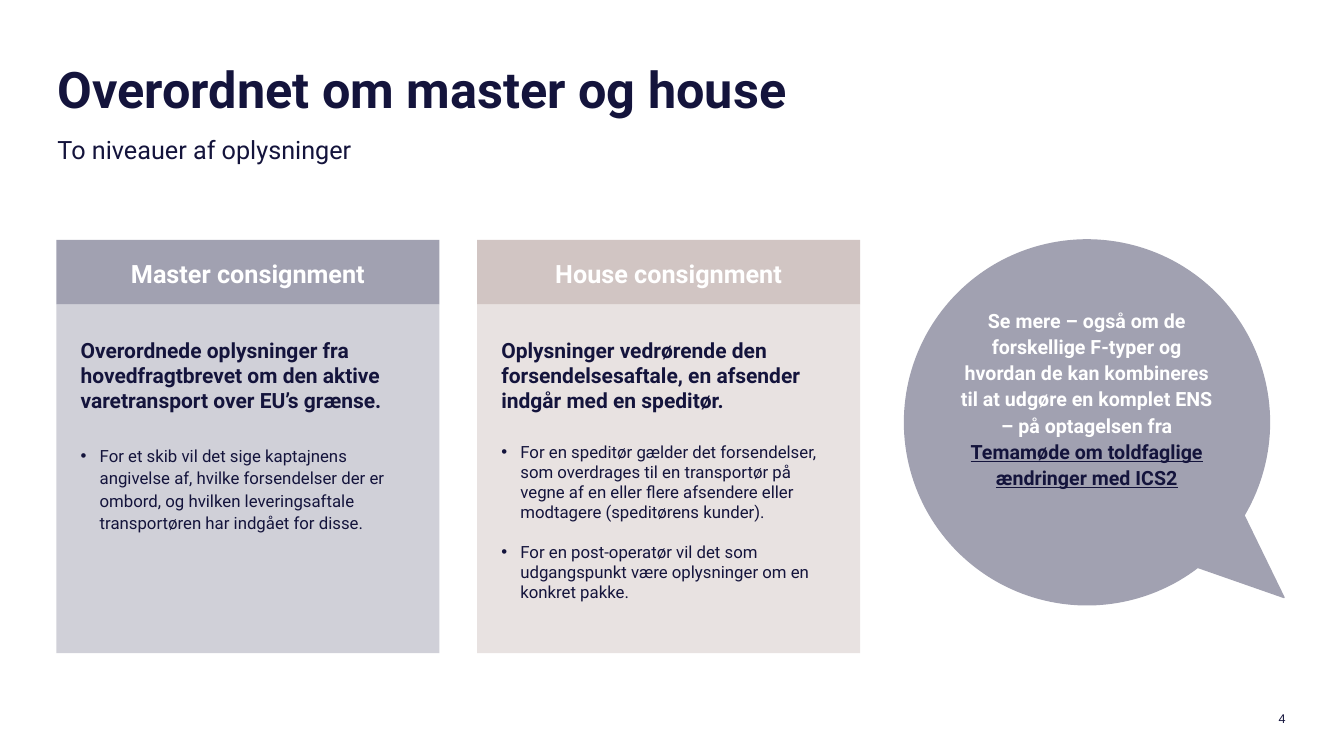
from pptx import Presentation
from pptx import util as u
from pptx.dml.color import RGBColor
from pptx.enum import shapes, text
from lxml import etree
from pptx.oxml.ns import qn

NAVY = RGBColor(0x14, 0x14, 0x3C)
WHITE = RGBColor(0xFF, 0xFF, 0xFF)
GREY = RGBColor(0xA1, 0xA1, 0xB1)
PALE_GREY = RGBColor(0xD0, 0xD0, 0xD8)
ROSE = RGBColor(0xD1, 0xC5, 0xC3)
PALE_ROSE = RGBColor(0xE8, 0xE2, 0xE1)

CARD_LEFT, CARD_STEP, CARD_WIDTH = 4.2, 31.3, 28.5
CARD_TOP, HEADER_HEIGHT, BODY_HEIGHT = 31.73, 8.53, 46.14
CARDS = [
    ("Master consignment", GREY, PALE_GREY,
     "Overordnede oplysninger fra hovedfragtbrevet om den aktive varetransport over EU’s grænse.",
     ["For et skib vil det sige kaptajnens angivelse af, hvilke forsendelser der er ombord, "
      "og hvilken leveringsaftale transportøren har indgået for disse."],
     21.6, 1.11),
    ("House consignment", ROSE, PALE_ROSE,
     "Oplysninger vedrørende den forsendelsesaftale, en afsender indgår med en speditør.",
     ["For en speditør gælder det forsendelser, som overdrages til en transportør på vegne af "
      "en eller flere afsendere eller modtagere (speditørens kunder).",
      "For en post-operatør vil det som udgangspunkt være oplysninger om en konkret pakke."],
     20, 1),
]


class SlideBuilder:
    """Draws styled elements on one slide, with lengths in percent of its size."""

    def __init__(self, presentation):
        self.width = presentation.slide_width
        self.height = presentation.slide_height
        self.slide = presentation.slides.add_slide(presentation.slide_layouts[5])

    def across(self, share):
        return u.Emu(round(self.width * share / 100))

    def down(self, share):
        return u.Emu(round(self.height * share / 100))

    def place(self, left, top, width, height):
        return self.across(left), self.down(top), self.across(width), self.down(height)

    def frame(self, shape, side=0, top=0, anchor=text.MSO_ANCHOR.TOP):
        frame = shape.text_frame
        frame.word_wrap = True
        frame.auto_size = text.MSO_AUTO_SIZE.NONE
        frame.vertical_anchor = anchor
        frame.margin_left = frame.margin_right = self.across(side)
        frame.margin_top, frame.margin_bottom = self.down(top), 0
        return frame

    def style(self, paragraph, size, color=NAVY, bold=False, align=text.PP_ALIGN.LEFT,
              spacing=1, after=0, font="Roboto"):
        paragraph.alignment = align
        paragraph.line_spacing = spacing
        paragraph.space_before = u.Pt(0)
        paragraph.space_after = u.Pt(after)
        paragraph.font.name = font
        paragraph.font.size = u.Pt(size)
        paragraph.font.bold = bold
        paragraph.font.color.rgb = color

    def title(self, words, box):
        title = self.slide.shapes.title
        title.left, title.top, title.width, title.height = self.place(*box)
        paragraph = self.frame(title).paragraphs[0]
        paragraph.text = words
        self.style(paragraph, 36, bold=True, spacing=0.89)

    def label(self, words, box, size, anchor=text.MSO_ANCHOR.TOP, **style):
        shape = self.slide.shapes.add_textbox(*self.place(*box))
        paragraph = self.frame(shape, anchor=anchor).paragraphs[0]
        paragraph.text = words
        self.style(paragraph, size, **style)
        return paragraph

    def shape(self, kind, box, color):
        shape = self.slide.shapes.add_shape(kind, *self.place(*box))
        shape.shadow.inherit = False
        shape.fill.solid()
        shape.fill.fore_color.rgb = color
        shape.line.fill.background()
        return shape

    def bullet(self, paragraph):
        properties = paragraph._p.get_or_add_pPr()
        indent = self.across(1.42)
        properties.set("marL", str(indent))
        properties.set("indent", str(-indent))
        etree.SubElement(properties, qn("a:buFont"), typeface="Arial")
        etree.SubElement(properties, qn("a:buChar"), char="•")

    def card(self, column, heading, color, pale, lead, bullets, lead_gap, spacing):
        left = CARD_LEFT + column * CARD_STEP
        rectangle = shapes.MSO_SHAPE.RECTANGLE
        body = self.shape(
            rectangle, (left, CARD_TOP + HEADER_HEIGHT, CARD_WIDTH, BODY_HEIGHT), pale)
        frame = self.frame(body, side=1.8, top=4.4)
        frame.paragraphs[0].text = lead
        self.style(frame.paragraphs[0], 15, bold=True, after=lead_gap)
        for words in bullets:
            paragraph = frame.add_paragraph()
            paragraph.text = words
            self.bullet(paragraph)
            self.style(paragraph, 12, spacing=spacing, after=14)
        header = self.shape(rectangle, (left, CARD_TOP, CARD_WIDTH, HEADER_HEIGHT), color)
        paragraph = self.frame(header, anchor=text.MSO_ANCHOR.MIDDLE).paragraphs[0]
        paragraph.text = heading
        self.style(paragraph, 18, WHITE, True, text.PP_ALIGN.CENTER, 1.11)

    def callout(self, words, reference):
        bubble = self.shape(
            shapes.MSO_SHAPE.OVAL_CALLOUT, (67.3, CARD_TOP, 27.15, 48.27), GREY)
        bubble.adjustments[0], bubble.adjustments[1] = 0.54, 0.48
        bubble.line.color.rgb = GREY
        bubble.line.width = u.Pt(1)
        paragraph = self.label(words, (71.34, 40.53, 19.05, 27.6), 14, color=WHITE,
                               bold=True, align=text.PP_ALIGN.CENTER, spacing=1.11)
        paragraph.add_line_break()
        run = paragraph.add_run()
        run.text = reference
        run.font.underline = True
        run.font.color.rgb = NAVY


def main():
    presentation = Presentation()
    presentation.slide_width = u.Inches(13.33)
    presentation.slide_height = u.Inches(7.5)
    builder = SlideBuilder(presentation)
    builder.title("Overordnet om master og house", (4.28, 8.67, 91.5, 7.6))
    builder.label("To niveauer af oplysninger", (4.28, 17.33, 91.5, 5.47), 18, spacing=1.11)
    for column, card in enumerate(CARDS):
        builder.card(column, *card)
    builder.callout("Se mere – også om de forskellige F-typer og hvordan de kan kombineres "
                    "til at udgøre en komplet ENS – på optagelsen fra",
                    "Temamøde om toldfaglige ændringer med ICS2")
    builder.label("4", (82.9, 93.6, 12.75, 2.4), 9, anchor=text.MSO_ANCHOR.BOTTOM,
                  align=text.PP_ALIGN.RIGHT, font="Arial")
    presentation.save("out.pptx")


if __name__ == "__main__":
    main()
